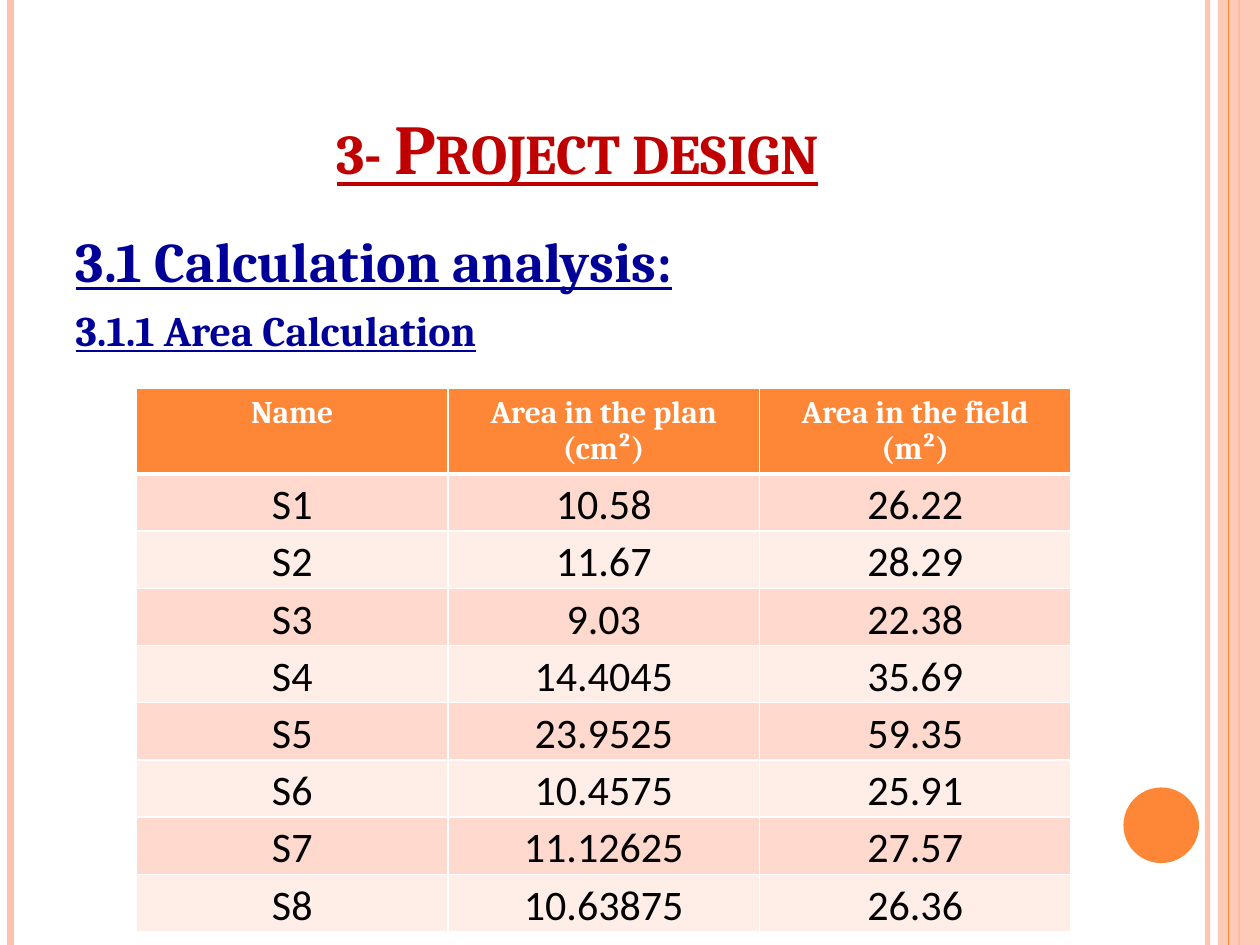
import pptx
import pptx.dml.color
import pptx.enum.shapes
import pptx.enum.text
import pptx.oxml.ns
import pptx.oxml.xmlchemy
import pptx.util
from lxml import etree

Pt = pptx.util.Pt
qn = pptx.oxml.ns.qn
Align = pptx.enum.text.PP_ALIGN
Anchor = pptx.enum.text.MSO_ANCHOR
Form = pptx.enum.shapes.MSO_SHAPE

WIDE, HIGH = 720, 540
HEADS = ["Name", "Area in the plan (cm²)", "Area in the field (m²)"]
AREAS = [
    ["S1", "10.58", "26.22"],
    ["S2", "11.67", "28.29"],
    ["S3", "9.03", "22.38"],
    ["S4", "14.4045", "35.69"],
    ["S5", "23.9525", "59.35"],
    ["S6", "10.4575", "25.91"],
    ["S7", "11.12625", "27.57"],
    ["S8", "10.63875", "26.36"],
]


def color(code):
    return pptx.dml.color.RGBColor.from_string(code)


class Page:
    """Style of the deck and the slide being filled."""

    head, text = "Cambria", "Calibri"
    orange, peach, white = "FE8637", "FEC3AE", "FFFFFF"
    red, navy, black = "C00000", "000099", "000000"
    bands = ["FFD9CE", "FFEDE8"]

    def __init__(self, deck):
        self.slide = deck.slides.add_slide(deck.slide_layouts[1])

    def fade(self, item, alpha):
        """Set the opacity, in percent, of the item's solid colour."""
        tone = next(item._element.spPr.iter(qn("a:srgbClr")))
        etree.SubElement(tone, qn("a:alpha"), val=str(alpha * 1000))

    def rule(self, x, tone, width, alpha=100):
        """Draw an upright line over the whole slide height."""
        line = self.slide.shapes.add_connector(
            pptx.enum.shapes.MSO_CONNECTOR.STRAIGHT, Pt(x), 0, Pt(x), Pt(HIGH))
        line.line.color.rgb = color(tone)
        line.line.width = Pt(width)
        if alpha < 100:
            self.fade(line, alpha)
        etree.SubElement(line._element.spPr, qn("a:effectLst"))

    def shape(self, form, box, tone, alpha=100):
        item = self.slide.shapes.add_shape(form, *map(Pt, box))
        item.shadow.inherit = False
        item.fill.solid()
        item.fill.fore_color.rgb = color(tone)
        item.line.fill.background()
        if alpha < 100:
            self.fade(item, alpha)

    def run(self, para, text, size, font, tone, bold=False, under=False):
        run = para.add_run()
        run.text = text
        run.font.size = Pt(size)
        run.font.name = font
        run.font.bold = bold
        run.font.underline = under
        run.font.color.rgb = color(tone)
        return run

    def place(self, item, box):
        item.left, item.top, item.width, item.height = map(Pt, box)
        item.text_frame.word_wrap = True
        item.text_frame.auto_size = pptx.enum.text.MSO_AUTO_SIZE.NONE

    def title(self, text, box):
        item = self.slide.shapes.title
        self.place(item, box)
        item.text_frame.vertical_anchor = Anchor.BOTTOM
        para = item.text_frame.paragraphs[0]
        para.alignment = Align.CENTER
        run = self.run(para, text, 40, self.head, self.red, True, True)
        run.font._element.set("cap", "small")

    def body(self, lines, box):
        item = self.slide.placeholders[1]
        self.place(item, box)
        frame = item.text_frame
        for i, (text, size) in enumerate(lines):
            para = frame.add_paragraph() if i else frame.paragraphs[0]
            props = para._p.get_or_add_pPr()
            props.set("marL", "0")
            props.set("indent", "0")
            etree.SubElement(props, qn("a:buNone"))
            para.space_before = Pt(6 if i else 0)
            self.run(para, text, size, self.head, self.navy, True, True)

    def border(self, cell, base):
        """Edge a cell in white, with the given width at its base."""
        props = cell._tc.get_or_add_tcPr()
        for i, (side, width) in enumerate(zip("LRTB", [1, 1, 1, base])):
            edge = etree.Element(qn("a:ln" + side), w=str(Pt(width)))
            fill = etree.SubElement(edge, qn("a:solidFill"))
            etree.SubElement(fill, qn("a:srgbClr"), val=self.white)
            props.insert(i, edge)

    def cell(self, cell, text, row):
        cell.fill.solid()
        para = cell.text_frame.paragraphs[0]
        para.alignment = Align.CENTER
        if row == 0:
            cell.fill.fore_color.rgb = color(self.orange)
            self.run(para, text, 18, self.head, self.white, True)
        else:
            cell.fill.fore_color.rgb = color(self.bands[(row - 1) % 2])
            cell.vertical_anchor = Anchor.BOTTOM
            cell.margin_left = cell.margin_right = cell.margin_top = Pt(0.72)
            cell.margin_bottom = 0
            self.run(para, text, 24, self.text, self.black)
        self.border(cell, 1 if row else 3)

    def table(self, rows, box, top):
        """Add a table whose first row is top points high, the rest equal."""
        table = self.slide.shapes.add_table(
            len(rows), len(rows[0]), *map(Pt, box)).table
        for col in table.columns:
            col.width = Pt(box[2] / len(rows[0]))
        for r, row in enumerate(rows):
            high = (box[3] - top) / (len(rows) - 1) if r else top
            table.rows[r].height = Pt(high)
            for c, text in enumerate(row):
                self.cell(table.cell(r, c), text, r)


def main():
    deck = pptx.Presentation()
    deck.slide_width, deck.slide_height = Pt(WIDE), Pt(HIGH)
    page = Page(deck)
    page.rule(690, page.peach, 3, 93)
    page.rule(6, page.peach, 4.5)
    page.rule(708, page.orange, 1.5)
    page.shape(Form.RECTANGLE, (696, 0, 24, HIGH), page.peach, 87)
    page.rule(702, page.orange, 0.75)
    page.shape(Form.OVAL, (642, 450, 43.2, 43.2), page.orange)
    page.title("3- Project design", (36, 21.6, 588, 90))
    page.body([("3.1 Calculation analysis:", 32),
               ("3.1.1 Area Calculation", 24)], (36, 126, 588, 384))
    page.table([HEADS] + AREAS, (78, 222, 534, 309.6), 48)
    deck.save("out.pptx")


if __name__ == "__main__":
    main()
